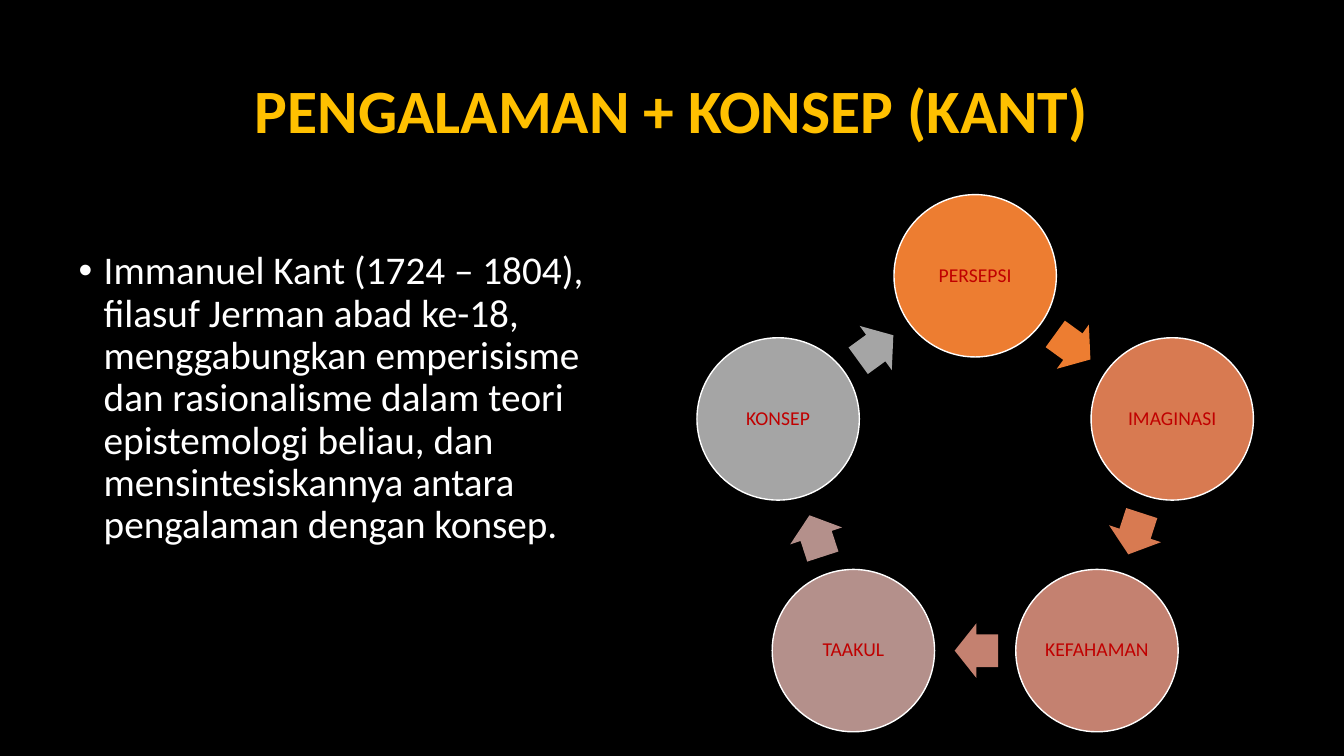
from dataclasses import dataclass
from math import cos, radians, sin

from lxml.etree import SubElement
from pptx import Presentation
from pptx.dml.color import RGBColor
from pptx.enum.shapes import MSO_SHAPE as Shape
from pptx.enum.text import MSO_ANCHOR as Anchor, PP_ALIGN as Align
from pptx.oxml.ns import qn
from pptx.util import Pt


@dataclass(frozen=True)
class Theme:
    font: str = "Calibri"
    background: str = "000000"
    title: str = "FFC000"
    body: str = "FFFFFF"
    outline: str = "FFFFFF"
    label: str = "C00000"
    title_size: int = 44
    body_size: int = 28
    label_size: int = 14


THEME = Theme()
STAGES = [
    ("PERSEPSI", "ED7D31"),
    ("IMAGINASI", "D87A51"),
    ("KEFAHAMAN", "C48170"),
    ("TAAKUL", "B4908B"),
    ("KONSEP", "A5A5A5"),
]
CENTER_X, CENTER_Y, RADIUS = 696.6, 345, 148
CIRCLE_SIZE = 116
ARROW_WIDTH, ARROW_HEIGHT = 31, 39
ARROW_SETBACK = 0.8


def paint(fill, color):
    fill.solid()
    fill.fore_color.rgb = RGBColor.from_string(color)


def write(box, text, size, color, align, anchor, bold=False):
    frame = box.text_frame
    frame.word_wrap = True
    frame.vertical_anchor = anchor
    frame.text = text
    para = frame.paragraphs[0]
    para.alignment = align
    para.line_spacing = 0.9
    font = para.runs[0].font
    font.name = THEME.font
    font.size = Pt(size)
    font.bold = bold
    font.color.rgb = RGBColor.from_string(color)
    return para


def add_title(page, text):
    box = page.shapes.add_textbox(Pt(66), Pt(28.8), Pt(828), Pt(104.4))
    write(box, text, THEME.title_size, THEME.title, Align.CENTER, Anchor.MIDDLE, bold=True)


def add_bullet(page, text):
    box = page.shapes.add_textbox(Pt(49), Pt(175.7), Pt(409), Pt(285.8))
    para = write(box, text, THEME.body_size, THEME.body, Align.LEFT, Anchor.TOP)
    para.space_before = Pt(10)
    properties = para._p.get_or_add_pPr()
    properties.set("marL", str(Pt(18)))
    properties.set("indent", str(Pt(-18)))
    SubElement(properties, qn("a:buFont"), typeface="Arial")
    SubElement(properties, qn("a:buChar"), char="•")


def add_centered(page, kind, x, y, width, height, color):
    shape = page.shapes.add_shape(
        kind, Pt(x - width / 2), Pt(y - height / 2), Pt(width), Pt(height)
    )
    shape.shadow.inherit = False
    paint(shape.fill, color)
    return shape


def add_stage(page, label, color, angle):
    x = CENTER_X + RADIUS * sin(angle)
    y = CENTER_Y - RADIUS * cos(angle)
    circle = add_centered(page, Shape.OVAL, x, y, CIRCLE_SIZE, CIRCLE_SIZE, color)
    paint(circle.line.fill, THEME.outline)
    circle.line.width = Pt(1)
    frame = circle.text_frame
    frame.margin_left = frame.margin_right = Pt(1.4)
    frame.margin_top = frame.margin_bottom = Pt(1.4)
    write(circle, label, THEME.label_size, THEME.label, Align.CENTER, Anchor.MIDDLE)


def add_cycle_arrow(page, color, degrees, half_step):
    angle = radians(degrees)
    reach = RADIUS * cos(radians(half_step))
    x = CENTER_X + reach * sin(angle) - ARROW_SETBACK * cos(angle)
    y = CENTER_Y - reach * cos(angle) - ARROW_SETBACK * sin(angle)
    arrow = add_centered(page, Shape.RIGHT_ARROW, x, y, ARROW_WIDTH, ARROW_HEIGHT, color)
    arrow.adjustments[0] = 0.6
    arrow.adjustments[1] = 0.5
    arrow.rotation = degrees
    arrow.line.fill.background()


def add_cycle(page, stages):
    step = 360 / len(stages)
    for index, (label, color) in enumerate(stages):
        add_stage(page, label, color, radians(index * step))
        add_cycle_arrow(page, color, (index + 0.5) * step, step / 2)


def main():
    deck = Presentation()
    deck.slide_width, deck.slide_height = Pt(960), Pt(540)
    page = deck.slides.add_slide(deck.slide_layouts[6])
    paint(page.background.fill, THEME.background)
    add_title(page, "PENGALAMAN + KONSEP (KANT)")
    add_bullet(
        page,
        "Immanuel Kant (1724 – 1804), filasuf Jerman abad ke-18, "
        "menggabungkan emperisisme dan rasionalisme dalam teori "
        "epistemologi beliau, dan mensintesiskannya antara "
        "pengalaman dengan konsep.",
    )
    add_cycle(page, STAGES)
    deck.save("out.pptx")


if __name__ == "__main__":
    main()
